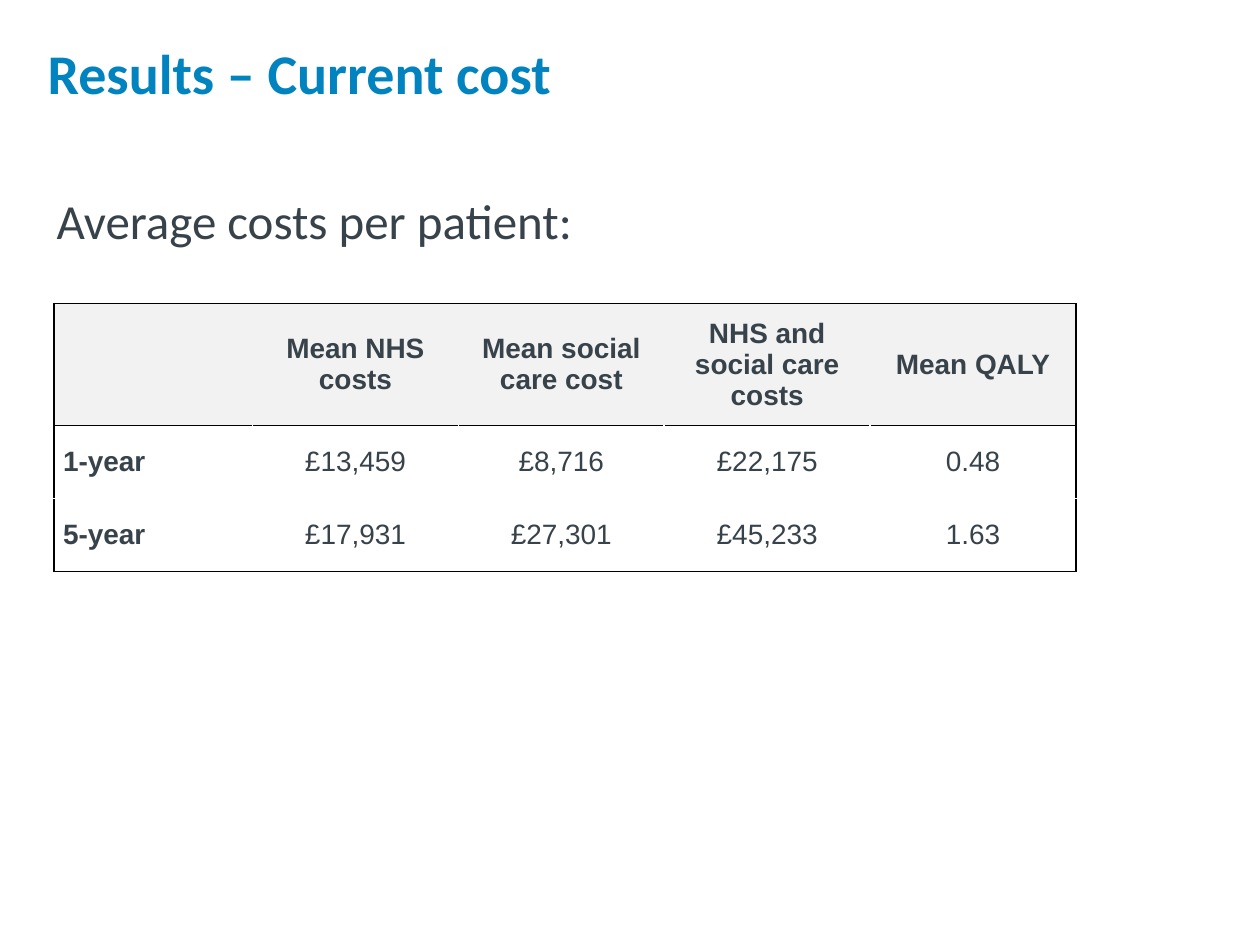
from dataclasses import dataclass

from lxml.etree import SubElement
from pptx import Presentation
from pptx.dml.color import RGBColor
from pptx.enum.text import MSO_ANCHOR, PP_ALIGN
from pptx.oxml.ns import qn
from pptx.util import Cm, Pt

BLUE, SLATE, BLACK, WHITE, GREY = "0083BE", "37424A", "000000", "FFFFFF", "F2F2F2"
BORDER_WIDTH = Pt(1)
CELL_FORMAT = {
    "vertical_anchor": MSO_ANCHOR.MIDDLE,
    "margin_left": Cm(0.18),
    "margin_right": Cm(0.18),
    "margin_top": Cm(0),
    "margin_bottom": Cm(0),
}
COLUMN_WIDTHS = [4, 4.15, 4.15, 4.15, 4.15]
ROW_HEIGHTS = [2.46, 1.47, 1.47]
COSTS = [
    ["", "Mean NHS costs", "Mean social care cost", "NHS and social care costs", "Mean QALY"],
    ["1-year", "£13,459", "£8,716", "£22,175", "0.48"],
    ["5-year", "£17,931", "£27,301", "£45,233", "1.63"],
]


@dataclass
class Heading:
    text: str
    left: float
    top: float
    width: float
    height: float
    size: int
    color: str
    bold: bool


TITLE = Heading("Results – Current cost", 0.71, 0.91, 14.4, 1.8, 32, BLUE, True)
SUBTITLE = Heading("Average costs per patient:", 0.89, 3.94, 18.21, 5.79, 28, SLATE, False)


def rgb(value: str) -> RGBColor:
    return RGBColor.from_string(value)


def apply_format(target, values: dict) -> None:
    for attribute, value in values.items():
        setattr(target, attribute, value)


def style_font(paragraph, name: str, size: int, bold: bool, color: str) -> None:
    apply_format(paragraph.font, {"name": name, "size": Pt(size), "bold": bold})
    paragraph.font.color.rgb = rgb(color)


def draw_heading(slide, heading: Heading) -> None:
    box = slide.shapes.add_textbox(
        Cm(heading.left), Cm(heading.top), Cm(heading.width), Cm(heading.height)
    )
    box.text_frame.word_wrap = True
    paragraph = box.text_frame.paragraphs[0]
    apply_format(paragraph, {"text": heading.text, "line_spacing": 0.8})
    style_font(paragraph, "Calibri", heading.size, heading.bold, heading.color)


def draw_borders(cell, colors: dict) -> None:
    properties = cell._tc.get_or_add_tcPr()
    for position, (side, color) in enumerate(colors.items()):
        line = properties.makeelement(qn(f"a:ln{side}"), {"w": str(BORDER_WIDTH)})
        properties.insert(position, line)
        if color:
            fill = SubElement(line, qn("a:solidFill"))
            SubElement(fill, qn("a:srgbClr"), val=color)
        else:
            SubElement(line, qn("a:noFill"))


def draw_cell(cell, text: str, row: int, column: int) -> None:
    header, label = row == 0, column == 0
    last_row, last_column = row == len(COSTS) - 1, column == len(COSTS[0]) - 1
    apply_format(cell, CELL_FORMAT)
    if header:
        cell.fill.solid()
        cell.fill.fore_color.rgb = rgb(GREY)
    else:
        cell.fill.background()
    paragraph = cell.text_frame.paragraphs[0]
    apply_format(paragraph, {
        "text": text,
        "alignment": PP_ALIGN.LEFT if label else PP_ALIGN.CENTER,
    })
    style_font(paragraph, "Arial", 16, header or label, SLATE)
    inner = None if header else WHITE
    draw_borders(cell, {
        "L": BLACK if label else inner,
        "R": BLACK if last_column else inner,
        "T": BLACK if row <= 1 else WHITE,
        "B": BLACK if header or last_row else WHITE,
    })


def draw_cost_table(slide) -> None:
    table = slide.shapes.add_table(
        len(COSTS), len(COSTS[0]), Cm(1.09), Cm(6.12),
        Cm(sum(COLUMN_WIDTHS)), Cm(sum(ROW_HEIGHTS)),
    ).table
    apply_format(table, {"first_row": False, "horz_banding": False})
    for column, width in zip(table.columns, COLUMN_WIDTHS):
        column.width = Cm(width)
    for row, height in zip(table.rows, ROW_HEIGHTS):
        row.height = Cm(height)
    for row, texts in enumerate(COSTS):
        for column, text in enumerate(texts):
            draw_cell(table.cell(row, column), text, row, column)


def main() -> None:
    presentation = Presentation()
    apply_format(presentation, {"slide_width": Cm(25.4), "slide_height": Cm(19.05)})
    slide = presentation.slides.add_slide(presentation.slide_layouts[6])
    draw_heading(slide, TITLE)
    draw_cost_table(slide)
    draw_heading(slide, SUBTITLE)
    presentation.save("out.pptx")


if __name__ == "__main__":
    main()
